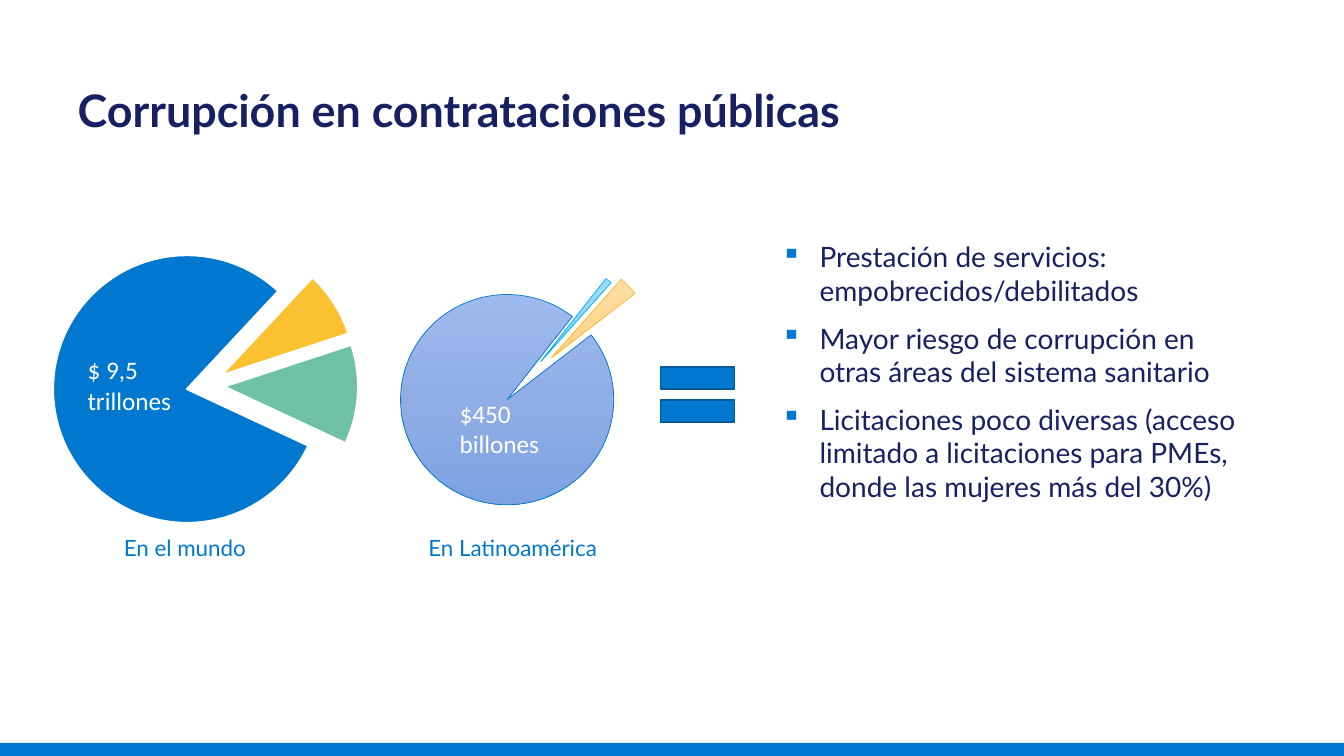
from lxml import etree
from pptx import Presentation
from pptx.chart.data import CategoryChartData
from pptx.dml.color import RGBColor
from pptx.enum.chart import XL_CHART_TYPE
from pptx.enum.shapes import MSO_SHAPE as SHAPE
from pptx.enum.text import MSO_ANCHOR as ANCHOR, PP_ALIGN as ALIGN
from pptx.oxml.ns import qn
from pptx.util import Inches, Pt

NAVY, BLUE, WHITE = "162063", "0078CF", "FFFFFF"

WORLD_PIE = {
    "values": (80, 8, 12), "start": 115, "explosion": 14, "line_width": 1.5,
    "plot_area": (0.214, 0.051, 0.539, 0.898),
    "slices": [
        {"fill": (BLUE,), "line": WHITE},
        {"fill": ("FBC130",), "line": WHITE},
        {"fill": ("6EC1A3",), "line": WHITE},
    ],
}
REGION_PIE = {
    "values": (97, 1, 3), "start": 52, "line_width": 0.5,
    "plot_area": (0.219, 0.011, 0.637, 0.874),
    "slices": [
        {"fill": ("9DB9ED", "90AEE4", "7CA2E1"), "line": BLUE, "explosion": 14},
        {"fill": ("9EDCFF", "90D7FF", "7CD2FF"), "line": "00B0F0", "explosion": 34},
        {"fill": ("FFDEA5", "FED896", "FFD383"), "line": "FBB92B", "explosion": 43},
    ],
}
CONSEQUENCES = (
    "Prestación de servicios: empobrecidos/debilitados",
    "Mayor riesgo de corrupción en otras áreas del sistema sanitario",
    "Licitaciones poco diversas (acceso limitado a licitaciones para PMEs, "
    "donde las mujeres más del 30%)",
)


def color(value):
    return RGBColor.from_string(value)


def element(tag, **attributes):
    node = etree.Element(qn(tag))
    for name, value in attributes.items():
        node.set(name, str(value))
    return node


def place(shape, box):
    shape.left, shape.top, shape.width, shape.height = map(Inches, box)


def style(paragraph, size, font_color, name="Lato", bold=False):
    font = paragraph.font
    font.size, font.name, font.bold = Pt(size), name, bold
    font.color.rgb = color(font_color)


def add_block(slide, box, shape_type, fill, line=None):
    shape = slide.shapes.add_shape(shape_type, *map(Inches, box))
    shape.shadow.inherit = False
    shape.fill.solid()
    shape.fill.fore_color.rgb = color(fill)
    if line:
        shape.line.color.rgb = color(line)
        shape.line.width = Pt(1)
    else:
        shape.line.fill.background()


def add_text(slide, box, text, size, font_color, name="Lato", spacing=1.0):
    frame = slide.shapes.add_textbox(*map(Inches, box)).text_frame
    frame.word_wrap = True
    paragraph = frame.paragraphs[0]
    paragraph.text = text
    paragraph.line_spacing = spacing
    style(paragraph, size, font_color, name)


def add_title(slide, box, text):
    title = slide.shapes.title
    place(title, box)
    title.text_frame.vertical_anchor = ANCHOR.TOP
    paragraph = title.text_frame.paragraphs[0]
    paragraph.text = text
    paragraph.alignment = ALIGN.LEFT
    paragraph.line_spacing = 0.9
    style(paragraph, 32, NAVY, bold=True)


def add_bullets(slide, box, items):
    frame = slide.shapes.add_textbox(*map(Inches, box)).text_frame
    frame.word_wrap = True
    for index, item in enumerate(items):
        paragraph = frame.add_paragraph() if index else frame.paragraphs[0]
        paragraph.text = item
        paragraph.space_before = Pt(10 if index else 0)
        properties = paragraph._p.get_or_add_pPr()
        properties.set("marL", str(Inches(0.38)))
        properties.set("indent", str(-Inches(0.38)))
        bullet_color = element("a:buClr")
        bullet_color.append(element("a:srgbClr", val=BLUE))
        properties.append(bullet_color)
        properties.append(element("a:buChar", char="▪"))
        style(paragraph, 20, NAVY)


def fill_slice(fill, colors):
    """Fill with one colour, or with evenly spaced stops from top to bottom."""
    if len(colors) == 1:
        fill.solid()
        fill.fore_color.rgb = color(colors[0])
        return
    fill.gradient()
    fill.gradient_angle = 270
    stops = fill.gradient_stops._gsLst
    for stop in list(stops):
        stops.remove(stop)
    for index, value in enumerate(colors):
        stop = element("a:gs", pos=100000 * index // (len(colors) - 1))
        stop.append(element("a:srgbClr", val=value))
        stops.append(stop)


def set_plot_area(plot_area, fractions):
    """Fix the inner plot area as fractions of the chart box."""
    for old_layout in plot_area.findall(qn("c:layout")):
        plot_area.remove(old_layout)
    layout, manual = element("c:layout"), element("c:manualLayout")
    layout.append(manual)
    manual.append(element("c:layoutTarget", val="inner"))
    for side in ("xMode", "yMode"):
        manual.append(element(f"c:{side}", val="edge"))
    for side, fraction in zip("xywh", fractions):
        manual.append(element(f"c:{side}", val=fraction))
    plot_area.insert(0, layout)


def add_pie(slide, box, pie):
    data = CategoryChartData()
    data.categories = ["1", "2", "3"]
    data.add_series("Series 1", pie["values"])
    chart = slide.shapes.add_chart(XL_CHART_TYPE.PIE, *map(Inches, box), data).chart
    chart.has_title = chart.has_legend = False
    chart.font.size, chart.font.name = Pt(10), "Calibri"
    chart.font.color.rgb = color(NAVY)
    plot = chart.plots[0]
    plot.vary_by_categories = True
    plot._element.append(element("c:firstSliceAng", val=pie["start"]))
    set_plot_area(plot._element.getparent(), pie["plot_area"])

    series = plot.series[0]
    for index, look in enumerate(pie["slices"]):
        slice_format = series.points[index].format
        fill_slice(slice_format.fill, look["fill"])
        slice_format.line.color.rgb = color(look["line"])
        slice_format.line.width = Pt(pie["line_width"])
    if "explosion" in pie:
        series_name = series._element.find(qn("c:tx"))
        series_name.addnext(element("c:explosion", val=pie["explosion"]))
    for point, look in zip(series._element.findall(qn("c:dPt")), pie["slices"]):
        if "explosion" in look:
            point_format = point.find(qn("c:spPr"))
            point_format.addprevious(element("c:explosion", val=look["explosion"]))


def add_pie_group(slide, pie_box, pie, amount_at, amount, caption_left, caption):
    add_pie(slide, pie_box, pie)
    add_text(slide, (*amount_at, 1.32, 0.71), amount, 18, WHITE, "Calibri")
    add_text(slide, (caption_left, 5.28, 3.67, 0.33), caption, 16, BLUE, spacing=0.9)


def build_slide(presentation):
    slide = presentation.slides.add_slide(presentation.slide_layouts[5])
    add_block(slide, (0, 7.37, 13.33, 0.13), SHAPE.RECTANGLE, BLUE)
    add_title(slide, (0.67, 0.83, 12, 1.03), "Corrupción en contrataciones públicas")
    add_pie_group(slide, (3.35, 2.76, 3.32, 2.42), REGION_PIE,
                  (4.46, 3.9), "$450 billones", 4.15, "En Latinoamérica")
    add_pie_group(slide, (-0.68, 1.94, 5.62, 3.77), WORLD_PIE,
                  (0.77, 3.47), "$ 9,5 trillones", 1.13, "En el mundo")
    add_block(slide, (6.42, 3.45, 1, 0.93), SHAPE.MATH_EQUAL, BLUE, "005999")
    add_bullets(slide, (7.65, 2.33, 4.78, 3.28), CONSEQUENCES)


def main():
    presentation = Presentation()
    presentation.slide_width, presentation.slide_height = Inches(13.33), Inches(7.5)
    build_slide(presentation)
    presentation.save("out.pptx")


if __name__ == "__main__":
    main()
